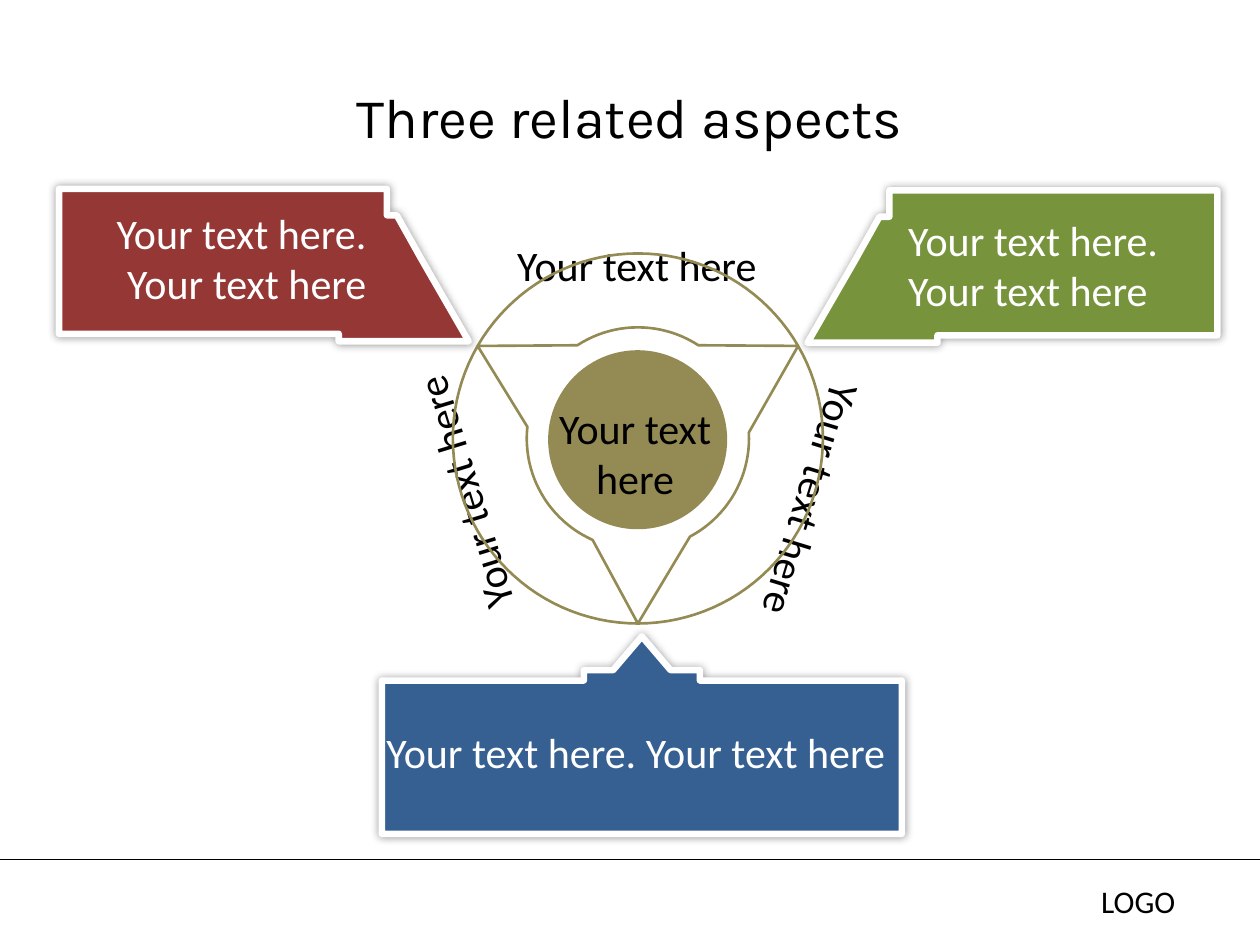
import dataclasses
import math

import pptx
import pptx.dml.color
import pptx.enum.shapes
import pptx.enum.text
import pptx.oxml
import pptx.oxml.ns
import pptx.util

Cm = pptx.util.Cm
ALIGN = pptx.enum.text.PP_ALIGN
ANCHOR = pptx.enum.text.MSO_ANCHOR


@dataclasses.dataclass(frozen=True)
class Theme:
    heading_font: str = "Karla"
    body_font: str = "Calibri"
    heading_size: int = 32
    body_size: int = 24
    logo_size: int = 18
    black: str = "000000"
    white: str = "FFFFFF"
    green: str = "77933C"
    red: str = "953735"
    blue: str = "376092"
    khaki: str = "948A54"


def rgb(code):
    return pptx.dml.color.RGBColor.from_string(code)


def set_values(target, values):
    for name, value in values.items():
        setattr(target, name, value)


class SlideBuilder:
    def __init__(self, slide, theme):
        self.slide = slide
        self.theme = theme

    def group(self):
        return self.slide.shapes.add_group_shape().shapes

    def fill_text(self, frame, text, align, color, size, font=None, anchor=ANCHOR.TOP):
        set_values(frame, {
            "text": text,
            "word_wrap": True,
            "auto_size": pptx.enum.text.MSO_AUTO_SIZE.NONE,
            "vertical_anchor": anchor,
        })
        paragraph = frame.paragraphs[0]
        paragraph.alignment = align
        run_font = paragraph.runs[0].font
        set_values(run_font, {
            "name": font or self.theme.body_font,
            "size": pptx.util.Pt(size),
        })
        run_font.color.rgb = rgb(color)

    def title(self, text, box):
        heading = self.slide.shapes.title
        set_values(heading, dict(zip(("left", "top", "width", "height"), map(Cm, box))))
        self.fill_text(heading.text_frame, text, ALIGN.CENTER, self.theme.black,
                       self.theme.heading_size, self.theme.heading_font, ANCHOR.MIDDLE)

    def label(self, text, box, align=ALIGN.CENTER, color=None, size=None,
              rotation=0, shapes=None):
        shapes = self.slide.shapes if shapes is None else shapes
        caption = shapes.add_textbox(*map(Cm, box))
        caption.rotation = rotation
        self.fill_text(caption.text_frame, text, align, color or self.theme.black,
                       size or self.theme.body_size)

    def paint(self, shape, fill=None, line=None, width=0):
        shape.shadow.inherit = False
        if fill:
            shape.fill.solid()
            shape.fill.fore_color.rgb = rgb(fill)
        else:
            shape.fill.background()
        if line:
            shape.line.color.rgb = rgb(line)
            shape.line.width = pptx.util.Pt(width)
        else:
            shape.line.fill.background()

    def outline(self, points, shapes=None, **paint):
        """Draw a closed polygon through points given in centimetres."""
        shapes = self.slide.shapes if shapes is None else shapes
        first, *others = [(Cm(x), Cm(y)) for x, y in points]
        builder = shapes.build_freeform(*first)
        builder.add_line_segments(others, close=True)
        polygon = builder.convert_to_shape()
        self.paint(polygon, **paint)
        return polygon

    def glow(self, shape):
        """Give the shape a soft shadow on all sides."""
        effects = shape._element.spPr.find(pptx.oxml.ns.qn("a:effectLst"))
        effects.append(pptx.oxml.parse_xml(
            f'<a:outerShdw {pptx.oxml.ns.nsdecls("a")} blurRad="63500" dist="0">'
            f'<a:srgbClr val="{self.theme.black}"><a:alpha val="40000"/></a:srgbClr>'
            '</a:outerShdw>'))

    def callout(self, points, fill, text, box, align):
        shapes = self.group()
        self.glow(self.outline(points, shapes, fill=fill, line=self.theme.white, width=3.75))
        self.label(text, box, align, self.theme.white, shapes=shapes)

    def hub(self, text, circle, box):
        shapes = self.group()
        disc = shapes.add_shape(pptx.enum.shapes.MSO_SHAPE.OVAL, *map(Cm, circle))
        self.paint(disc, fill=self.theme.khaki)
        self.label(text, box, shapes=shapes)

    def rule(self, start, end, width):
        line = self.slide.shapes.add_connector(
            pptx.enum.shapes.MSO_CONNECTOR.STRAIGHT, *map(Cm, start + end))
        line.line.color.rgb = rgb(self.theme.black)
        line.line.width = pptx.util.Pt(width)
        line._element.spPr.append(pptx.oxml.parse_xml(
            f'<a:effectLst {pptx.oxml.ns.nsdecls("a")}/>'))


def arc(center, radius, start, end, step=3):
    """Points along an arc; degrees run clockwise from the right."""
    count = math.ceil(abs(end - start) / step)
    angles = [math.radians(start + (end - start) * i / count) for i in range(count + 1)]
    return [(center[0] + radius * math.cos(a), center[1] + radius * math.sin(a))
            for a in angles]


def ring_points(center, outer, inner):
    """A circle whose three inner notches reach out to its rim."""
    points = arc(center, outer, -30, -30 + 360)[::-1]
    for start, end, tip in ((-3, 62, 90), (114, 186, 210), (237, 303, 330)):
        points += arc(center, inner, start, end) + arc(center, outer, tip, tip + 1)[:1]
    return points


def main():
    theme = Theme()
    deck = pptx.Presentation()
    deck.slide_width, deck.slide_height = Cm(25.4), Cm(19.05)
    page = SlideBuilder(deck.slides.add_slide(deck.slide_layouts[5]), theme)
    phrase = "Your text here"
    double_phrase = f"{phrase}. {phrase}"

    page.title("Three related aspects", (1.27, 0.76, 22.86, 3.18))

    right_callout = [(24.54, 3.84), (17.93, 3.84), (17.93, 4.37), (17.73, 4.37),
                     (17.22, 5.28), (16.28, 6.91), (18.9, 6.91), (18.9, 6.76),
                     (24.54, 6.76)]
    left_callout = [(25.73 - x, y - 0.03) for x, y in right_callout]
    bottom_axis = 12.94
    bottom_half = [(0, 12.83), (0.58, 13.51), (1.17, 13.51), (1.17, 13.72),
                   (5.24, 13.72), (5.24, 16.81)]
    bottom_callout = ([(bottom_axis + x, y) for x, y in bottom_half]
                      + [(bottom_axis - x, y) for x, y in bottom_half[:0:-1]])
    for points, fill, box, align in (
        (right_callout, theme.green, (18.06, 4.19, 6.55, 2.31), ALIGN.LEFT),
        (left_callout, theme.red, (1.09, 4.06, 6.55, 2.31), ALIGN.RIGHT),
        (bottom_callout, theme.blue, (7.42, 14.53, 10.8, 1.27), ALIGN.CENTER),
    ):
        page.callout(points, fill, double_phrase, box, align)

    page.hub(phrase, (11.05, 7.06, 3.61, 3.61), (11, 7.98, 3.61, 2.31))
    for left, top, rotation in ((8.61, 4.7, 0), (8.56, 4.65, 253), (8.71, 4.8, 107)):
        page.label(phrase, (left, top, 8.46, 8.46), rotation=rotation)
    page.outline(ring_points((12.86, 8.84), 3.73, 2.24), line=theme.khaki, width=1.5)

    page.rule((0, 17.32), (25.4, 17.32), 0.75)
    page.label("LOGO", (21.95, 17.65, 2.82, 1.02), ALIGN.LEFT, size=theme.logo_size)
    deck.save("out.pptx")


if __name__ == "__main__":
    main()
